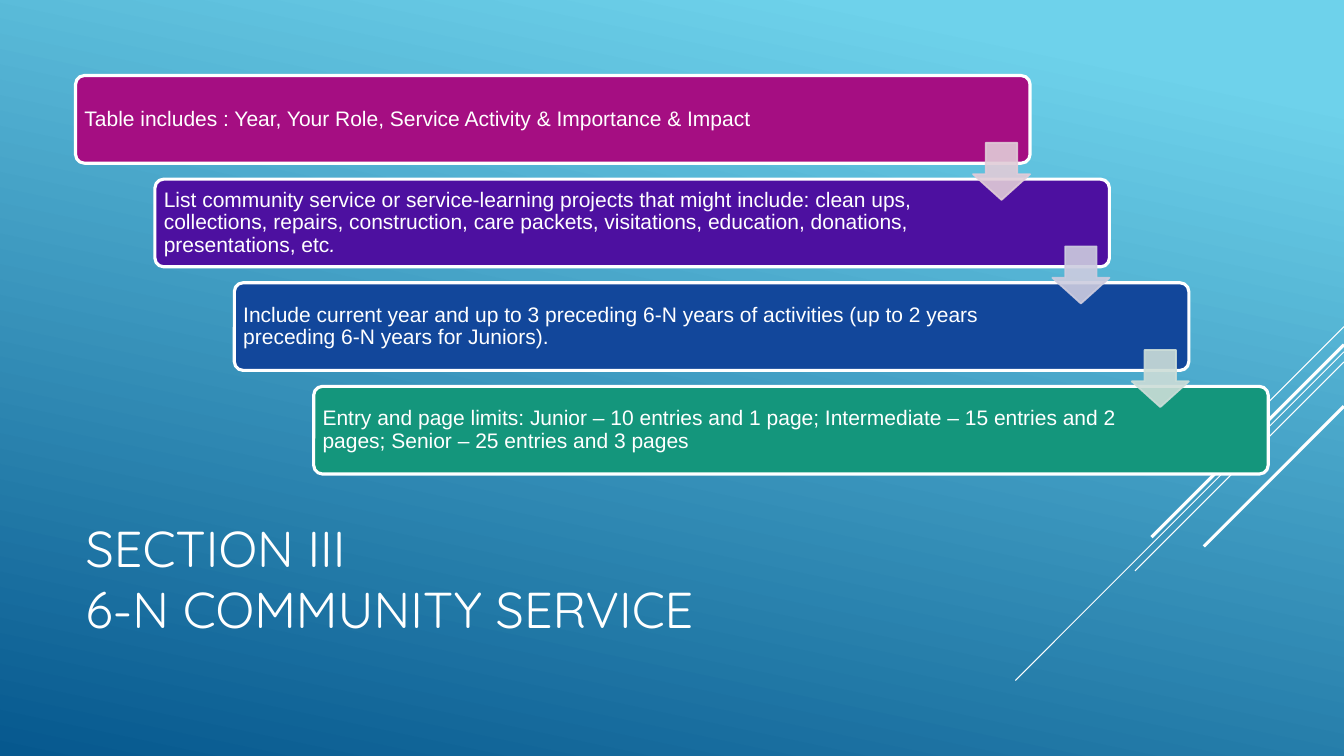
from dataclasses import dataclass

from lxml.etree import SubElement
from pptx import Presentation
from pptx.dml.color import RGBColor
from pptx.enum.shapes import MSO_CONNECTOR as Connector, MSO_SHAPE as Shape
from pptx.enum.text import MSO_ANCHOR as Anchor, MSO_AUTO_SIZE as AutoSize, PP_ALIGN as Align
from pptx.oxml.ns import qn
from pptx.util import Pt

SLIDE_W, SLIDE_H = 960, 540


@dataclass(frozen=True)
class Theme:
    white: str = "FFFFFF"
    sky: str = "6ED2EB"
    deep_sea: str = "06588E"
    steps: tuple = ("A50E82", "4D10A0", "12479B", "14967C")
    arrows: tuple = ("E1CCD8", "CDCCDF", "CCDDD8")
    title_font: str = "Quicksand"
    body_font: str = "Arial"
    title_size: float = 36
    body_size: float = 15


def write(frame, text, *, font, size, color, inset=None, spacing=1.0, after=0, italic_tail=""):
    """Fill a text frame with one left-aligned paragraph, centred vertically."""
    frame.word_wrap = True
    frame.auto_size = AutoSize.NONE
    frame.vertical_anchor = Anchor.MIDDLE
    if inset is not None:
        frame.margin_left = frame.margin_right = Pt(inset)
        frame.margin_top = frame.margin_bottom = Pt(inset)
    paragraph = frame.paragraphs[0]
    paragraph.text = text
    paragraph.alignment = Align.LEFT
    paragraph.line_spacing = spacing
    paragraph.space_after = Pt(after)
    if italic_tail:
        tail = paragraph.add_run()
        tail.text = italic_tail
        tail.font.italic = True
    for run in paragraph.runs:
        run.font.name = font
        run.font.size = Pt(size)
        run.font.color.rgb = RGBColor.from_string(color)


class SlideBuilder:
    def __init__(self, slide, theme):
        self.slide = slide
        self.theme = theme

    def background(self, angle):
        fill = self.slide.background.fill
        fill.gradient()
        fill.gradient_angle = angle
        stops = ((0.1, self.theme.sky), (1, self.theme.deep_sea))
        for stop, (position, color) in zip(fill.gradient_stops, stops):
            stop.position = position
            stop.color.rgb = RGBColor.from_string(color)

    def title(self, text, left, top, width, height):
        heading = self.slide.shapes.title
        heading.left, heading.top = Pt(left), Pt(top)
        heading.width, heading.height = Pt(width), Pt(height)
        write(heading.text_frame, text, font=self.theme.title_font,
              size=self.theme.title_size, color=self.theme.white)

    def line(self, x1, y1, x2, y2, weight):
        stroke = self.slide.shapes.add_connector(
            Connector.STRAIGHT, Pt(x1), Pt(y1), Pt(x2), Pt(y2))
        stroke.line.color.rgb = RGBColor.from_string(self.theme.white)
        stroke.line.width = Pt(weight)
        SubElement(stroke._element.spPr, qn("a:effectLst"))

    def shape(self, kind, left, top, width, height, *, fill, outline, weight,
              adjust, opacity=None):
        item = self.slide.shapes.add_shape(kind, Pt(left), Pt(top), Pt(width), Pt(height))
        item.shadow.inherit = False
        for index, value in enumerate(adjust):
            item.adjustments[index] = value
        item.fill.solid()
        item.fill.fore_color.rgb = RGBColor.from_string(fill)
        item.line.color.rgb = RGBColor.from_string(outline)
        item.line.width = Pt(weight)
        if opacity is not None:
            for color in item._element.spPr.iter(qn("a:srgbClr")):
                SubElement(color, qn("a:alpha"), val=str(opacity * 1000))

    def text(self, text, left, top, width, height, italic_tail=""):
        box = self.slide.shapes.add_textbox(Pt(left), Pt(top), Pt(width), Pt(height))
        write(box.text_frame, text, font=self.theme.body_font, size=self.theme.body_size,
              color=self.theme.white, inset=4.5, spacing=0.9, after=5.25,
              italic_tail=italic_tail)


# Wording, italic ending and text width of each step
STEPS = (
    ("Table includes : Year, Your Role, Service Activity & Importance & Impact", "", 608.4),
    ("List community service or service-learning projects that might include: clean ups, "
     "collections, repairs, construction, care packets, visitations, education, donations, "
     "presentations, etc", ".", 580.5),
    ("Include current year and up to 3 preceding 6-N years of activities "
     "(up to 2 years preceding 6-N years for Juniors).", "", 580.5),
    ("Entry and page limits: Junior – 10 entries and 1 page; Intermediate – 15 entries "
     "and 2 pages; Senior – 25 entries and 3 pages", "", 580.5),
)
# Diagonals from the right edge: start height, run, weight
DIAGONALS = (
    (233.3, 72, 0.75),
    (251.3, 234.7, 0.75),
    (258.5, 149.3, 0.75),
    (246.2, 137.5, 2.25),
    (290.2, 100.1, 2.25),
)
STAIR_LEFT, STAIR_TOP = 54, 54
STEP_W, STEP_H = 681.8, 62.6
SHIFT_X, SHIFT_Y = 56.7, 74
TEXT_GAP = 1.8
ARROW, ARROW_DROP = 40.8, 48


def main():
    deck = Presentation()
    deck.slide_width, deck.slide_height = Pt(SLIDE_W), Pt(SLIDE_H)
    theme = Theme()
    page = SlideBuilder(deck.slides.add_slide(deck.slide_layouts[5]), theme)

    # Backdrop
    page.background(angle=258)
    for start, run, weight in DIAGONALS:
        page.line(SLIDE_W, start, SLIDE_W - run, start + run, weight)

    # Title
    page.title("SECTION III\v6-N COMMUNITY SERVICE", 54, 353.5, 672, 118.8)

    # Staircase of steps
    corners = [(STAIR_LEFT + i * SHIFT_X, STAIR_TOP + i * SHIFT_Y) for i in range(len(STEPS))]
    for (left, top), color, (wording, tail, width) in zip(corners, theme.steps, STEPS):
        page.shape(Shape.ROUNDED_RECTANGLE, left, top, STEP_W, STEP_H, fill=color,
                   outline=theme.white, weight=2.25, adjust=(0.1,))
        page.text(wording, left + TEXT_GAP, top + TEXT_GAP, width,
                  STEP_H - 2 * TEXT_GAP, italic_tail=tail)

    # Arrows leading down to the next step
    for (left, top), color in zip(corners, theme.arrows):
        page.shape(Shape.DOWN_ARROW, left + STEP_W - ARROW, top + ARROW_DROP, ARROW, ARROW,
                   fill=color, outline=color, weight=1.25, adjust=(0.55, 0.45), opacity=90)

    deck.save("out.pptx")


if __name__ == "__main__":
    main()
